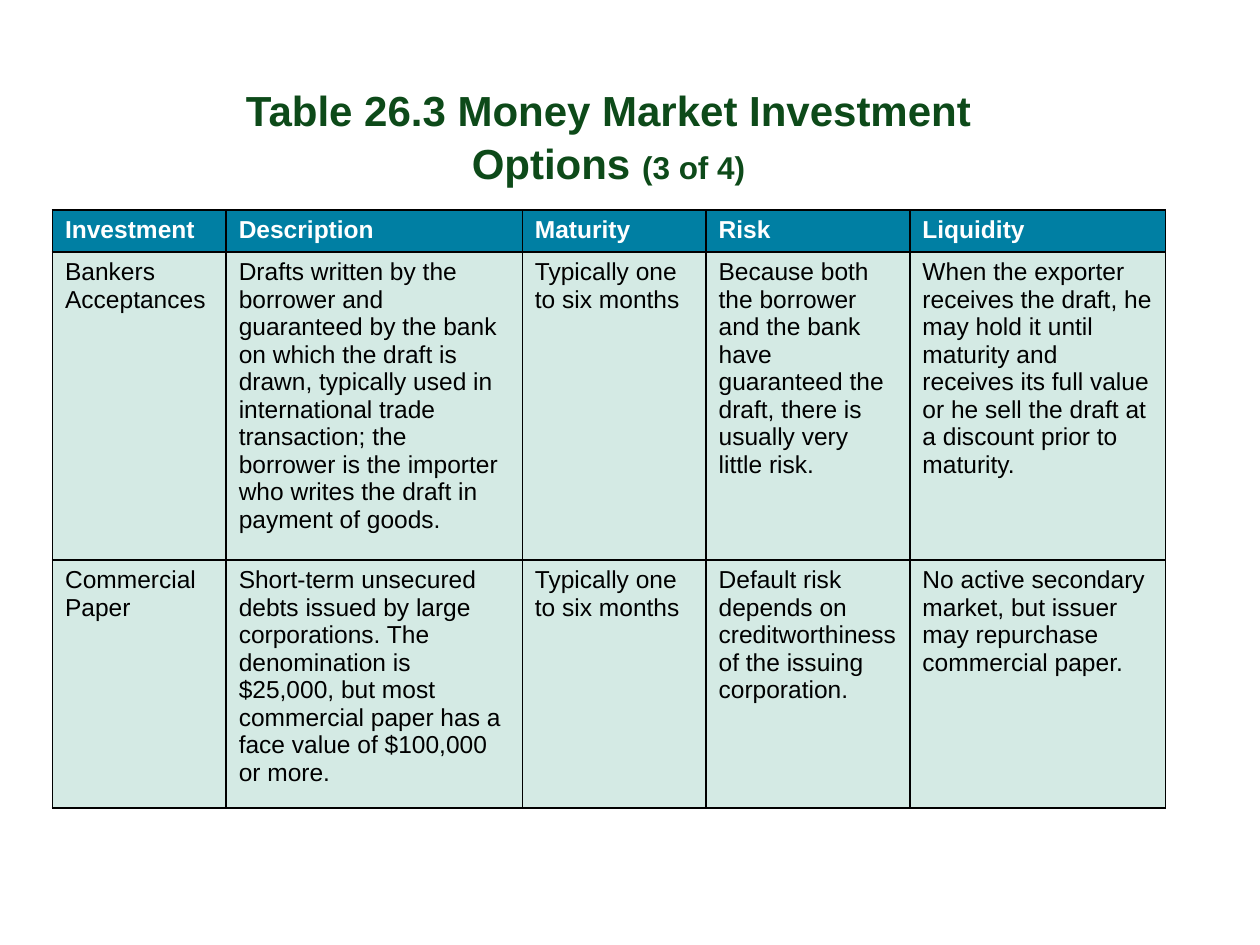
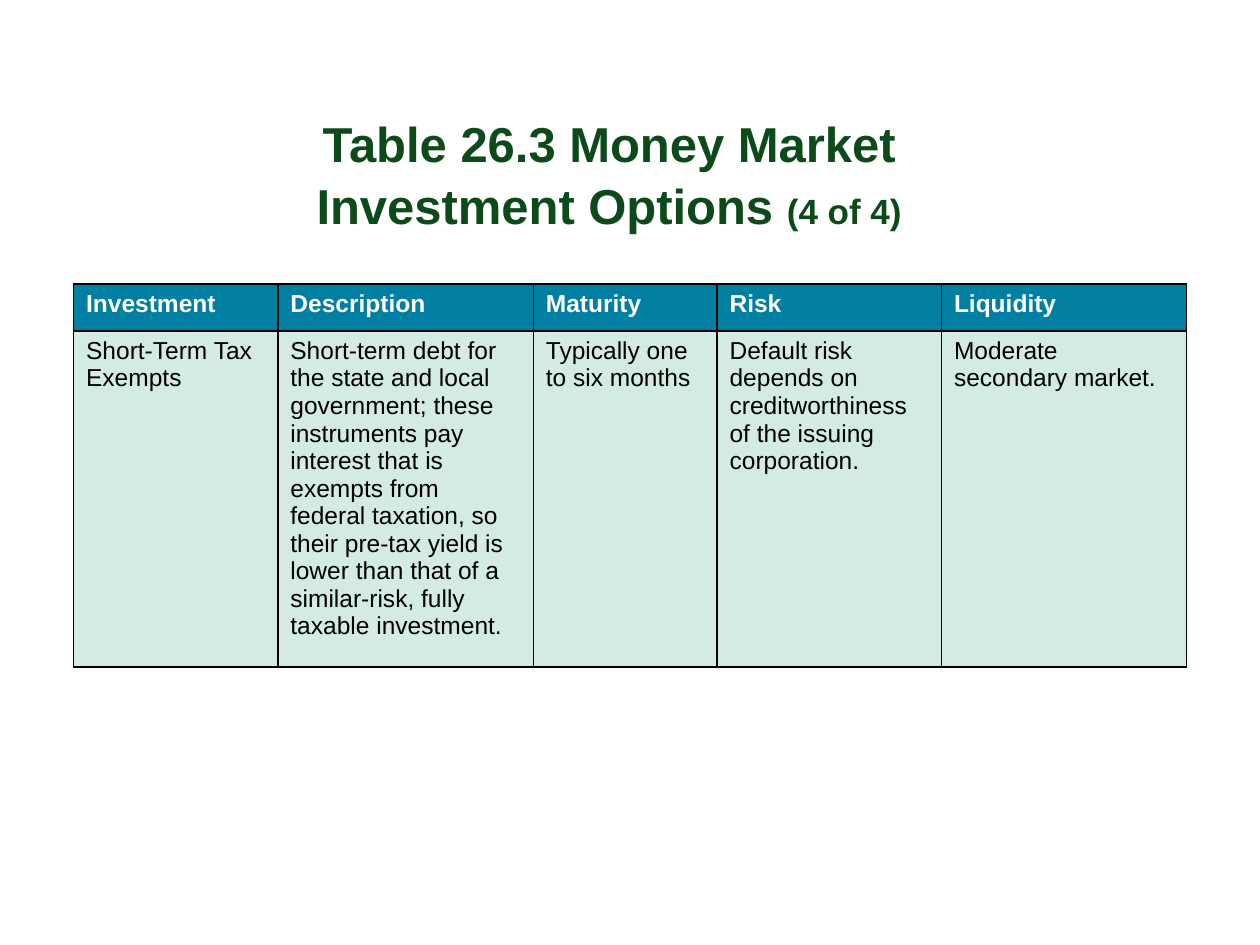
import pptx
import pptx.util
import pptx.dml.color
import pptx.enum.text
import pptx.oxml
import pptx.oxml.ns

Pt = pptx.util.Pt
RGBColor = pptx.dml.color.RGBColor

TITLE_GREEN = RGBColor(0x0D, 0x4A, 0x19)
HEADER_BLUE = RGBColor(0x00, 0x7F, 0xA3)
BODY_MINT = RGBColor(0xD4, 0xEA, 0xE4)
WHITE = RGBColor(0xFF, 0xFF, 0xFF)
BLACK = RGBColor(0x00, 0x00, 0x00)

HEADINGS = ["Investment", "Description", "Maturity", "Risk", "Liquidity"]
MATURITY = "Typically one to six months"
ISSUER_RISK = "Default risk depends on creditworthiness of the issuing corporation."

pages = [
    {
        "part": "(3 of 4)",
        "title_box": (131.75, 49, 432, 58.3),
        "title_sizes": (24, 18),
        "table_corner": (30, 120),
        "columns": [99.25, 169.25, 105, 116.5, 146],
        "rows": [24, 176, 141.7],
        "investments": [
            ["Bankers Acceptances",
             "Drafts written by the borrower and guaranteed by the bank on which the draft is drawn, "
             "typically used in international trade transaction; the borrower is the importer who "
             "writes the draft in payment of goods.",
             MATURITY,
             "Because both the borrower and the bank have guaranteed the draft, there is usually very "
             "little risk.",
             "When the exporter receives the draft, he may hold it until maturity and receives its full "
             "value or he sell the draft at a discount prior to maturity."],
            ["Commercial Paper",
             "Short-term unsecured debts issued by large corporations. The denomination is $25,000, "
             "but most commercial paper has a face value of $100,000 or more.",
             MATURITY,
             ISSUER_RISK,
             "No active secondary market, but issuer may repurchase commercial paper."],
        ],
    },
    {
        "part": "(4 of 4)",
        "title_box": (174.25, 66.25, 347.75, 67.7),
        "title_sizes": (28, 20),
        "table_corner": (42, 162.2),
        "columns": [116.75, 146, 105, 128.25, 140],
        "rows": [26.9, 192],
        "investments": [
            ["Short-Term Tax Exempts",
             "Short-term debt for the state and local government; these instruments pay interest that "
             "is exempts from federal taxation, so their pre-tax yield is lower than that of a "
             "similar-risk, fully taxable investment.",
             MATURITY,
             ISSUER_RISK,
             "Moderate secondary market."],
        ],
    },
]


def add_run(paragraph, text, size, color, bold):
    run = paragraph.add_run()
    run.text = text
    run.font.name = "Arial"
    run.font.size = Pt(size)
    run.font.bold = bold
    run.font.color.rgb = color


def add_borders(cell):
    properties = cell._tc.get_or_add_tcPr()
    for position, side in enumerate(("lnL", "lnR", "lnT", "lnB")):
        border = pptx.oxml.parse_xml(
            f'<a:{side} {pptx.oxml.ns.nsdecls("a")} w="{Pt(1)}">'
            f'<a:solidFill><a:srgbClr val="{BLACK}"/></a:solidFill></a:{side}>'
        )
        properties.insert(position, border)


presentation = pptx.Presentation()
presentation.slide_width = Pt(720)
presentation.slide_height = Pt(540)

for page in pages:
    slide = presentation.slides.add_slide(presentation.slide_layouts[6])

    title = slide.shapes.add_textbox(*[Pt(length) for length in page["title_box"]]).text_frame
    title.word_wrap = True
    title.vertical_anchor = pptx.enum.text.MSO_ANCHOR.BOTTOM
    title.margin_left = title.margin_right = title.margin_top = title.margin_bottom = 0
    heading = title.paragraphs[0]
    heading.alignment = pptx.enum.text.PP_ALIGN.CENTER
    heading.line_spacing = 1.05
    title_size, part_size = page["title_sizes"]
    add_run(heading, "Table 26.3 Money Market Investment Options ", title_size, TITLE_GREEN, True)
    add_run(heading, page["part"], part_size, TITLE_GREEN, True)

    left, top = page["table_corner"]
    options = slide.shapes.add_table(
        len(page["rows"]), len(HEADINGS), Pt(left), Pt(top),
        Pt(sum(page["columns"])), Pt(sum(page["rows"])),
    ).table
    for column, width in zip(options.columns, page["columns"]):
        column.width = Pt(width)
    for row, height in zip(options.rows, page["rows"]):
        row.height = Pt(height)

    for row_index, texts in enumerate([HEADINGS] + page["investments"]):
        is_header = row_index == 0
        for column_index, text in enumerate(texts):
            cell = options.cell(row_index, column_index)
            cell.fill.solid()
            cell.fill.fore_color.rgb = HEADER_BLUE if is_header else BODY_MINT
            add_borders(cell)
            add_run(cell.text_frame.paragraphs[0], text, 14, WHITE if is_header else BLACK, is_header)

presentation.save("out.pptx")
